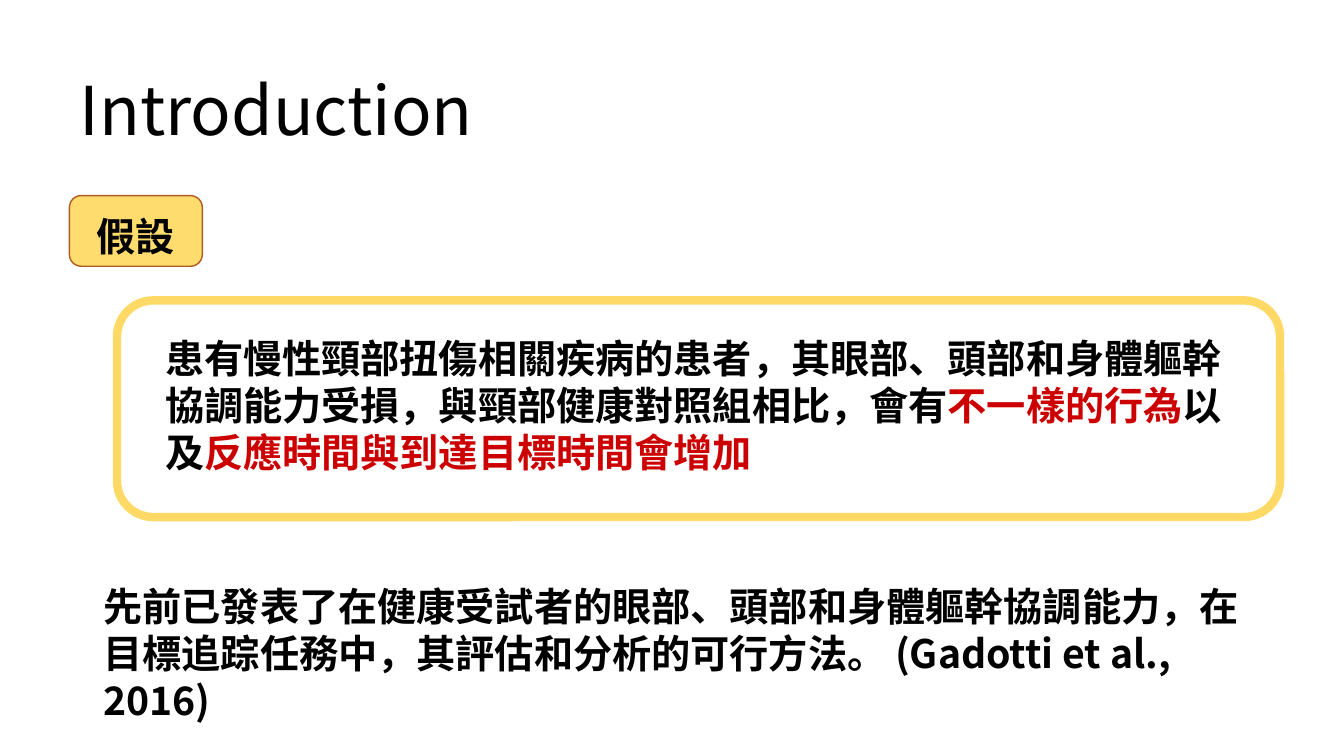
import pptx
import pptx.dml.color
import pptx.enum.shapes
import pptx.enum.text
import pptx.oxml
import pptx.oxml.ns
import pptx.util
from pptx.util import Cm, Pt

RGBColor = pptx.dml.color.RGBColor
BLACK = RGBColor(0x00, 0x00, 0x00)
RED = RGBColor(0xCC, 0x00, 0x00)
TAG_FILL = RGBColor(0xFF, 0xDC, 0x6D)
TAG_LINE = RGBColor(0xAF, 0x5C, 0x24)
FRAME_LINE = RGBColor(0xFF, 0xD9, 0x66)
FONT = "Noto Sans CJK SC"
ALIGN = pptx.enum.text.PP_ALIGN
ANCHOR = pptx.enum.text.MSO_ANCHOR
ROUNDED = pptx.enum.shapes.MSO_SHAPE.ROUNDED_RECTANGLE


def write(tf, runs, size, spacing, bold=True, align=ALIGN.LEFT):
    """Fill the first paragraph with (text, colour) runs, in Latin and East Asian font."""
    p = tf.paragraphs[0]
    p.alignment = align
    p.line_spacing = Pt(spacing)
    p.font.size = Pt(size)
    p.font.bold = bold
    for text, color in runs:
        r = p.add_run()
        r.text = text
        r.font.size = Pt(size)
        r.font.bold = bold
        r.font.name = FONT
        r.font.color.rgb = color
        ea = pptx.oxml.parse_xml(f'<a:ea {pptx.oxml.ns.nsdecls("a")} typeface="{FONT}"/>')
        r.font._element.find(pptx.oxml.ns.qn("a:latin")).addnext(ea)


def add_rounded(box, line, width):
    sp = s.shapes.add_shape(ROUNDED, *map(Cm, box))
    sp.shadow.inherit = False
    sp.fill.background()
    sp.line.color.rgb = line
    sp.line.width = Pt(width)
    return sp


prs = pptx.Presentation()
prs.slide_width, prs.slide_height = Cm(33.87), Cm(19.05)
s = prs.slides.add_slide(prs.slide_layouts[5])

# Title
title = s.shapes.title
title.left, title.top, title.width, title.height = map(Cm, (1.75, 1.55, 10.85, 2.31))
tf = title.text_frame
tf.word_wrap = False
tf.auto_size = pptx.enum.text.MSO_AUTO_SIZE.NONE
tf.vertical_anchor = ANCHOR.TOP
write(tf, [("Introduction", BLACK)], 48, 58.6, bold=False)

# Hypothesis tag and frame
tag = add_rounded((1.75, 4.93, 3.35, 1.78), TAG_LINE, 1)
tag.fill.solid()
tag.fill.fore_color.rgb = TAG_FILL
tag.text_frame.vertical_anchor = ANCHOR.MIDDLE
write(tag.text_frame, [("假設", BLACK)], 28, 40, align=ALIGN.CENTER)

add_rounded((2.95, 7.57, 29.31, 5.46), FRAME_LINE, 6)

# Body texts
hypothesis = [
    ("患有慢性頸部扭傷相關疾病的患者，其眼部、頭部和身體軀幹協調能力受損，與頸部健康對照組相比，會有", BLACK),
    ("不一樣的行為", RED),
    ("以及", BLACK),
    ("反應時間與到達目標時間會增加", RED),
]
earlier_work = [
    ("先前已發表了在健康受試者的眼部、頭部和身體軀幹協調能力，在目標追踪任務中，"
     "其評估和分析的可行方法。 (Gadotti et al., 2016)", BLACK),
]
for box, runs in (
    ((3.91, 8.31, 27.38, 3.84), hypothesis),
    ((2.36, 14.55, 29.9, 2.64), earlier_work),
):
    tf = s.shapes.add_textbox(*map(Cm, box)).text_frame
    tf.word_wrap = True
    write(tf, runs, 28, 33.6)

prs.save("out.pptx")
